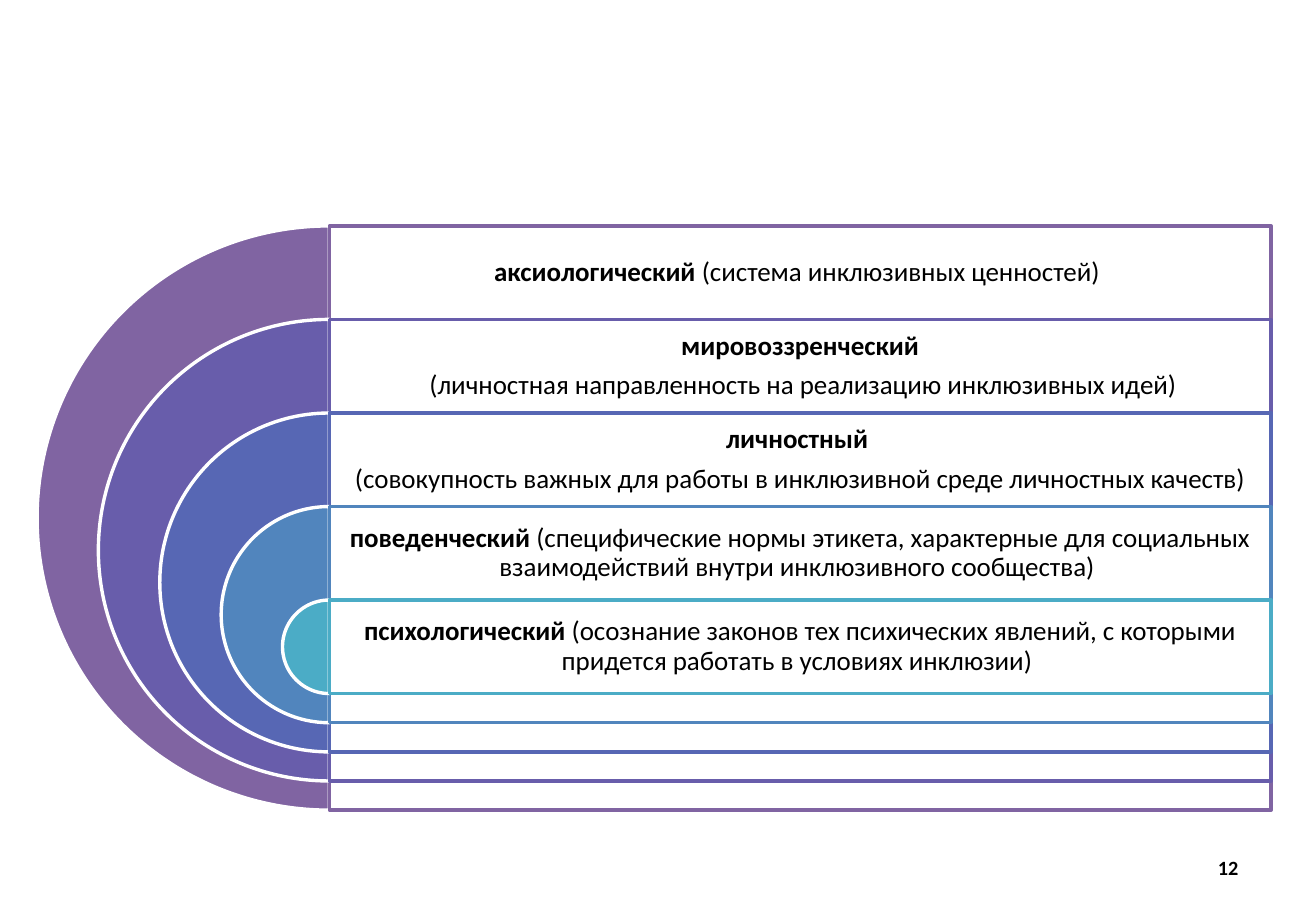
from lxml import etree
from pptx import Presentation, util as u
from pptx.dml.color import RGBColor
from pptx.enum import shapes, text
from pptx.oxml.ns import qn

WHITE = RGBColor(0xFF, 0xFF, 0xFF)
BLACK = RGBColor(0x00, 0x00, 0x00)
PURPLE = RGBColor(0x80, 0x64, 0xA2)
VIOLET = RGBColor(0x68, 0x5D, 0xAB)
INDIGO = RGBColor(0x57, 0x67, 0xB4)
BLUE = RGBColor(0x51, 0x85, 0xBD)
TEAL = RGBColor(0x4B, 0xAC, 0xC6)

CENTER_COL, PANEL_COLS = 27.1, 77.5
TOP_ROW, LABEL_ROWS = 18.6, 7.7
OUTER_ROWS, RING_STEP = 48.1, 10.1

RINGS = [
    (PURPLE, [[("аксиологический", True), (" (система инклюзивных ценностей) ", False)]]),
    (VIOLET, [[("мировоззренческий", True)],
              [(" (личностная направленность на реализацию инклюзивных идей)", False)]]),
    (INDIGO, [[("личностный ", True)],
              [("(совокупность важных для работы в инклюзивной среде личностных качеств)", False)]]),
    (BLUE, [[("поведенческий", True),
             (" (специфические нормы этикета, характерные для социальных "
              "взаимодействий внутри инклюзивного сообщества) ", False)]]),
    (TEAL, [[("психологический", True),
             (" (осознание законов тех психических явлений, с которыми "
              "придется работать в условиях инклюзии) ", False)]]),
]


class Deck:
    cell = u.Inches(0.1)
    font = "Calibri"

    def __init__(self, cols, rows):
        self.prs = Presentation()
        self.prs.slide_width, self.prs.slide_height = self.grid(cols, rows)
        self.s = self.prs.slides.add_slide(self.prs.slide_layouts[6])

    def grid(self, *cells):
        return [u.Emu(round(n * self.cell)) for n in cells]

    def shape(self, kind, box, fill, line):
        sp = self.s.shapes.add_shape(kind, *self.grid(*box))
        sp.shadow.inherit = False
        sp.fill.solid()
        sp.fill.fore_color.rgb = fill
        sp.line.color.rgb = line
        sp.line.width = u.Pt(2)
        return sp

    def half_disc(self, center, top, size, color):
        sp = self.shape(shapes.MSO_SHAPE.PIE, (center - size / 2, top, size, size), color, WHITE)
        sp.adjustments[0], sp.adjustments[1] = 54, 162

    def panel(self, box, color):
        sp = self.shape(shapes.MSO_SHAPE.RECTANGLE, box, WHITE, color)
        clr = sp.fill._xPr.find(qn("a:solidFill"))[0]
        etree.SubElement(clr, qn("a:alpha"), val="90000")

    def label(self, box, paragraphs, size=16, align=text.PP_ALIGN.CENTER, inset=0.7):
        tf = self.s.shapes.add_textbox(*self.grid(*box)).text_frame
        tf.word_wrap = True
        tf.vertical_anchor = text.MSO_ANCHOR.MIDDLE
        tf.margin_left = tf.margin_right = tf.margin_top = tf.margin_bottom = self.grid(inset)[0]
        for i, runs in enumerate(paragraphs):
            p = tf.add_paragraph() if i else tf.paragraphs[0]
            p.alignment = align
            p.line_spacing = 0.9
            p.space_after = u.Pt(6)
            p.font.name = self.font
            p.font.size = u.Pt(size)
            p.font.color.rgb = BLACK
            for words, bold in runs:
                r = p.add_run()
                r.text = words
                r.font.bold = bold


def main():
    deck = Deck(108.3, 75)
    deck.label((77.6, 69.5, 25.3, 4), [[("12", True)]], 12, text.PP_ALIGN.RIGHT, 1)
    for i, (color, paragraphs) in enumerate(RINGS):
        top = TOP_ROW + i * LABEL_ROWS
        size = OUTER_ROWS - i * RING_STEP
        deck.half_disc(CENTER_COL, top, size, color)
        deck.panel((CENTER_COL, top, PANEL_COLS, size), color)
        deck.label((CENTER_COL, top, PANEL_COLS, LABEL_ROWS), paragraphs)
    deck.prs.save("out.pptx")


if __name__ == "__main__":
    main()
